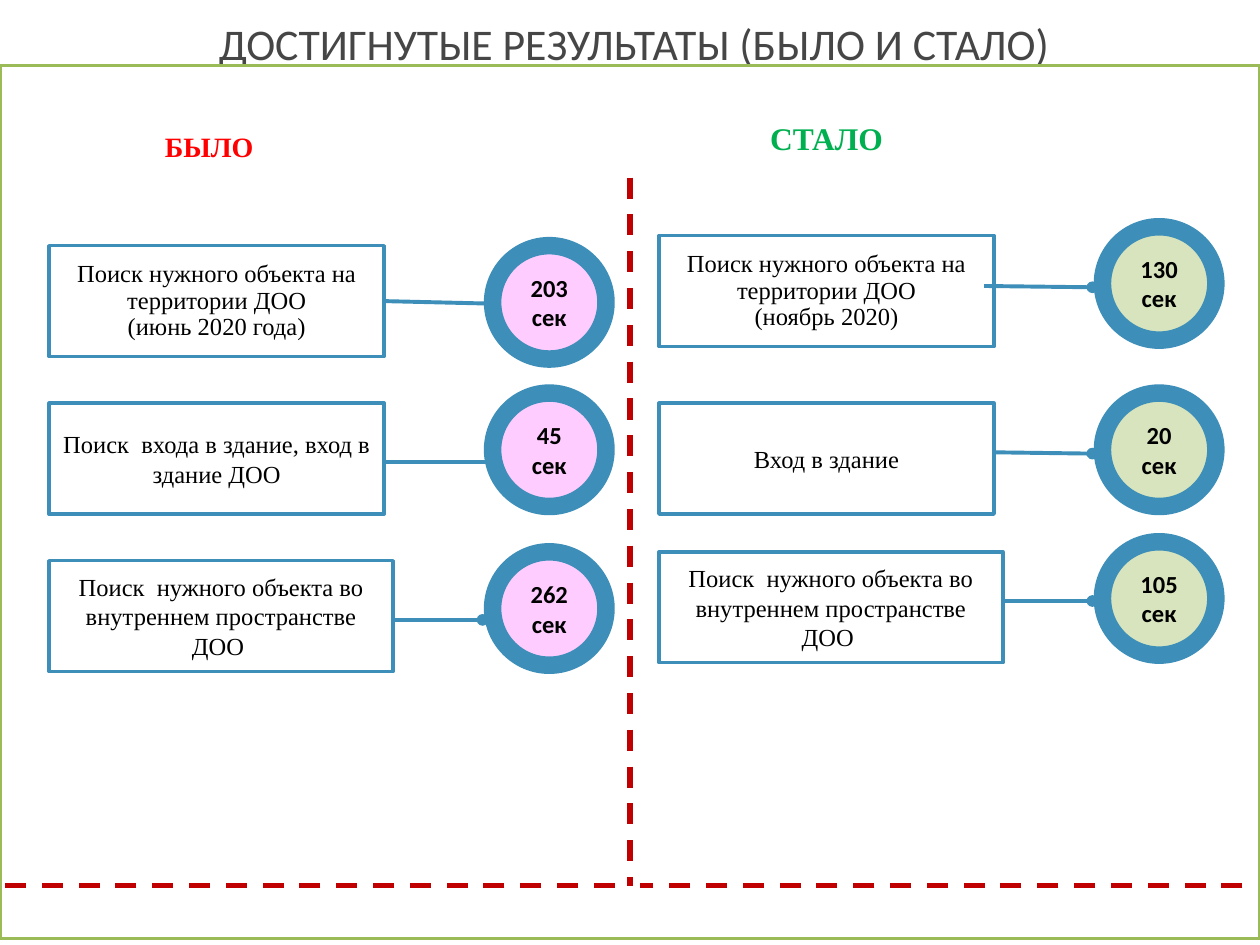
from lxml import etree
from pptx import Presentation
from pptx import util as u
from pptx.dml.color import RGBColor
from pptx.enum import dml, shapes, text
from pptx.oxml import ns

WHITE = RGBColor(0xFF, 0xFF, 0xFF)
BLACK = RGBColor(0, 0, 0)
GRAY = RGBColor(0x46, 0x46, 0x46)
BLUE = RGBColor(0x3D, 0x8E, 0xB9)
DARK_RED = RGBColor(0xC0, 0, 0)
RED = RGBColor(0xFF, 0, 0)
GREEN = RGBColor(0, 0xB0, 0x50)
OLIVE = RGBColor(0x9B, 0xBB, 0x59)
PINK = RGBColor(0xFF, 0xCC, 0xFF)
LIME = RGBColor(0xD7, 0xE4, 0xBD)

SERIF, SANS = "Times New Roman", "Calibri"
MIDDLE, BOTTOM = text.MSO_ANCHOR.MIDDLE, text.MSO_ANCHOR.BOTTOM


class Board:
    def __init__(self, slide):
        self.s = slide
        self.size = 14
        self.box_height = 0.88
        self.circle_size = 0.9

    def add_lines(self, sp, lines, size, font, color, bold=False, anchor=MIDDLE, spacing=None):
        tf = sp.text_frame
        tf.word_wrap = True
        tf.vertical_anchor = anchor
        for i, line in enumerate(lines):
            p = tf.paragraphs[0] if i == 0 else tf.add_paragraph()
            p.alignment = text.PP_ALIGN.CENTER
            if spacing:
                p.line_spacing = spacing
            r = p.add_run()
            r.text = line
            r.font.size = u.Pt(size)
            r.font.name = font
            r.font.bold = bold
            r.font.color.rgb = color

    def label(self, at, line, size, font, color, bold=False, anchor=MIDDLE):
        sp = self.s.shapes.add_textbox(*map(u.Inches, at))
        self.add_lines(sp, [line], size, font, color, bold, anchor)

    def shape(self, kind, at, fill, line, width):
        sp = self.s.shapes.add_shape(kind, *map(u.Inches, at))
        sp.shadow.inherit = False
        if fill is None:
            sp.fill.background()
        else:
            sp.fill.solid()
            sp.fill.fore_color.rgb = fill
        sp.line.color.rgb = line
        sp.line.width = u.Pt(width)
        return sp

    def frame(self, at):
        self.shape(shapes.MSO_SHAPE.RECTANGLE, at, None, OLIVE, 2)

    def box(self, x, y, width, lines, spacing):
        at = (x, y, width, self.box_height)
        sp = self.shape(shapes.MSO_SHAPE.RECTANGLE, at, WHITE, BLUE, 2)
        self.add_lines(sp, lines, self.size, SERIF, BLACK, spacing=spacing)
        return sp

    def circle(self, x, y, fill, lines):
        at = (x, y, self.circle_size, self.circle_size)
        sp = self.shape(shapes.MSO_SHAPE.FLOWCHART_CONNECTOR, at, fill, BLUE, 10)
        self.add_lines(sp, lines, self.size, SANS, BLACK, bold=True)

    def line(self, start, end, color, width):
        c = self.s.shapes.add_connector(
            shapes.MSO_CONNECTOR.STRAIGHT, *map(u.Inches, (*start, *end)))
        c.line.color.rgb = color
        c.line.width = u.Pt(width)
        etree.SubElement(c._element.spPr, ns.qn("a:effectLst"))
        return c

    def divider(self, start, end):
        self.line(start, end, DARK_RED, 3).line.dash_style = dml.MSO_LINE.DASH

    def link(self, start, end, box=None):
        c = self.line(start, end, BLUE, 2.25)
        ln = c._element.spPr.find(ns.qn("a:ln"))
        etree.SubElement(ln, ns.qn("a:tailEnd"), type="oval")
        if box is not None:
            c.begin_connect(box, 3)


def main():
    prs = Presentation()
    prs.slide_width, prs.slide_height = u.Inches(10), u.Inches(7.5)
    board = Board(prs.slides.add_slide(prs.slide_layouts[6]))

    board.divider((5, 1.41), (5, 7.03))
    board.divider((4.88, 7.03), (0, 7.03))
    board.divider((9.86, 7.03), (5.08, 7.03))
    board.label((0.12, -0.08, 9.9, 0.84), "ДОСТИГНУТЫЕ РЕЗУЛЬТАТЫ (БЫЛО И СТАЛО) ", 25, SANS, GRAY)
    board.frame((0, 0.52, 10, 6.93))
    board.label((0.94, 0.7, 1.44, 0.64), "БЫЛО", 16, SERIF, RED, True, BOTTOM)
    board.label((5.86, 0.62, 1.4, 0.67), "СТАЛО", 18, SERIF, GREEN, True, BOTTOM)

    territory = "Поиск нужного объекта на территории ДОО"
    indoors = ["Поиск  нужного объекта во внутреннем пространстве ДОО "]
    before = [
        (1.95, 2.66, [territory, "(июнь 2020 года)"], 0.9, 1.95, ["203", "сек"],
         (3.05, 2.39), (3.91, 2.41), True),
        (3.2, 2.66, ["Поиск  входа в здание, вход в здание ДОО"], None, 3.12, ["45 сек"],
         (3.05, 3.67), (3.91, 3.67), False),
        (4.45, 2.73, indoors, None, 4.38, ["262 сек"],
         (3.12, 4.92), (3.83, 4.92), False),
    ]
    after = [
        (1.87, 2.66, [territory, "(ноябрь 2020)"], 0.9, 1.8, ["130", "сек"],
         (7.81, 2.27), (8.67, 2.28), False),
        (3.2, 2.66, ["Вход в здание"], None, 3.12, ["20 сек"],
         (7.89, 3.59), (8.67, 3.6), False),
        (4.38, 2.73, indoors, None, 4.3, ["105 сек"],
         (7.97, 4.77), (8.67, 4.77), False),
    ]
    for box_x, circle_x, fill, rows in ((0.39, 3.91, PINK, before), (5.23, 8.75, LIME, after)):
        for box_y, width, task, spacing, circle_y, seconds, start, end, joined in rows:
            box = board.box(box_x, box_y, width, task, spacing)
            board.circle(circle_x, circle_y, fill, seconds)
            board.link(start, end, box if joined else None)

    prs.save("out.pptx")


if __name__ == "__main__":
    main()
